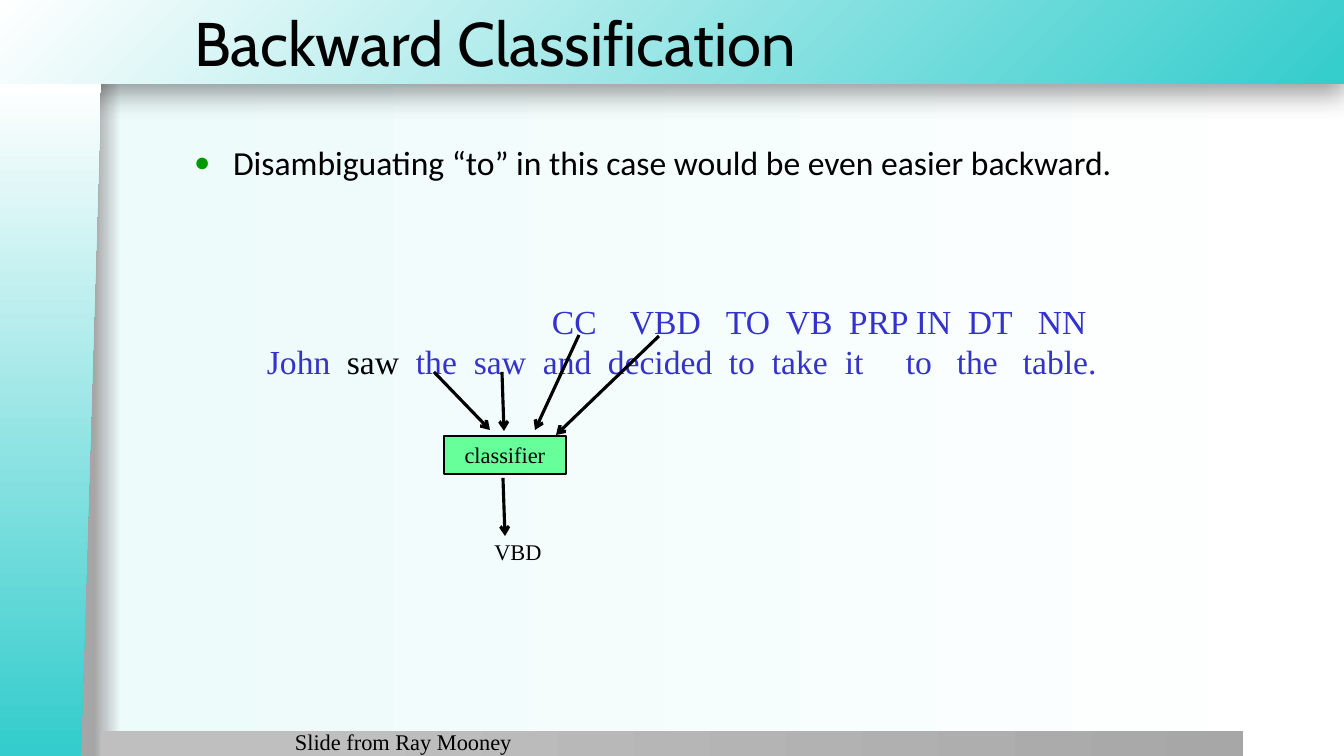
from dataclasses import dataclass
from typing import Any, NamedTuple, Optional

from lxml.etree import SubElement
from pptx import Presentation
from pptx.dml.color import RGBColor
from pptx.enum.shapes import MSO_CONNECTOR, MSO_SHAPE
from pptx.enum.text import MSO_ANCHOR, MSO_AUTO_SIZE, PP_ALIGN
from pptx.oxml.ns import qn
from pptx.util import Emu, Pt

EMU_PER_PX = 914400 / 100.8


def px(n: int) -> Emu:
    return Emu(round(n * EMU_PER_PX))


@dataclass(frozen=True)
class Theme:
    black: str = "000000"
    blue: str = "3333CC"
    green: str = "009900"
    mint: str = "66FF99"
    teal: str = "34CCCC"
    white: str = "FFFFFF"
    ice: str = "EDFBFB"
    grey: str = "A6A6A6"
    grey_light: str = "BFBFBF"
    grey_dark: str = "A7A7A7"
    heading: str = "Cabin"
    body: str = "Calibri"
    serif: str = "Times New Roman"
    title_size: int = 44
    text_size: int = 24
    label_size: int = 16
    arrow_width: float = 2.25


T = Theme()


class Box(NamedTuple):
    left: int
    top: int
    width: int
    height: int


class Gradient(NamedTuple):
    stops: tuple[tuple[int, str], ...]
    radial: bool = False


class Band(NamedTuple):
    kind: MSO_SHAPE
    box: Box
    gradient: Gradient
    rotation: int = 0
    flip: bool = False
    shadow: bool = False


class Label(NamedTuple):
    text: str
    box: Box
    align: PP_ALIGN
    fill: Optional[str] = None


class Arrow(NamedTuple):
    x1: int
    y1: int
    x2: int
    y2: int


class Word(NamedTuple):
    text: str
    left: int
    color: str = T.blue


BACKGROUND = Gradient(((7, T.grey), (9, T.ice), (100, T.white)))
BANDS = (
    Band(MSO_SHAPE.RECTANGLE, Box(-1, 0, 1345, 84),
         Gradient(((0, T.teal), (100, T.white)), radial=True), shadow=True),
    Band(MSO_SHAPE.RECTANGLE, Box(101, 731, 1142, 26),
         Gradient(((20, T.grey_light), (100, T.grey_dark)))),
    Band(MSO_SHAPE.FLOWCHART_MANUAL_INPUT, Box(-286, 370, 673, 101),
         Gradient(((1, T.teal), (100, T.white))), rotation=270, flip=True),
)
TITLE_BOX = Box(184, 0, 1160, 84)
BODY_BOX = Box(184, 137, 1058, 584)
BULLET_INDENT = 39
SENTENCE_BOX = Box(257, 296, 858, 92)
SENTENCE_LEFT = 267
TAGS = (Word("CC", 552), Word("VBD", 630), Word("TO", 726), Word("VB", 786),
        Word("PRP", 849), Word("IN", 916), Word("DT", 968), Word("NN", 1038))
WORDS = (Word("John", 267), Word("saw", 347, T.black), Word("the", 416),
         Word("saw", 474), Word("and", 543), Word("decided", 608),
         Word("to", 729), Word("take", 772), Word("it", 845),
         Word("to", 906), Word("the", 957), Word("table.", 1023))
LABELS = (
    Label("classifier", Box(444, 436, 122, 38), PP_ALIGN.CENTER, T.mint),
    Label("VBD", Box(465, 533, 106, 37), PP_ALIGN.CENTER),
    Label("Slide from Ray Mooney", Box(285, 723, 345, 25), PP_ALIGN.LEFT),
)
ARROWS = (Arrow(434, 372, 490, 430), Arrow(502, 372, 504, 431),
          Arrow(579, 335, 535, 430), Arrow(659, 336, 556, 435),
          Arrow(503, 478, 505, 536))


def apply(target: Any, formats: dict[str, Any]) -> None:
    for name, value in formats.items():
        setattr(target, name, value)


def add(parent: Any, tag: str, **attrs: Any) -> Any:
    return SubElement(parent, qn(tag), {k: str(v) for k, v in attrs.items()})


def place(sp: Any, box: Box) -> None:
    apply(sp, {name: px(n) for name, n in box._asdict().items()})


def write(p: Any, text: str, font: str, size: int, color: str = T.black) -> None:
    r = p.add_run()
    r.text = text
    apply(r.font, {"name": font, "size": Pt(size), "bold": False})
    r.font.color.rgb = RGBColor.from_string(color)


def paint(fill: Any, owner: Any, gradient: Gradient) -> None:
    fill.gradient()
    grad = next(owner.iter(qn("a:gradFill")))
    for child in list(grad):
        grad.remove(child)
    stops = add(grad, "a:gsLst")
    for pos, color in gradient.stops:
        add(add(stops, "a:gs", pos=pos * 1000), "a:srgbClr", val=color)
    if gradient.radial:
        path = add(grad, "a:path", path="circle")
        add(path, "a:fillToRect", l=100000, t=100000)
    else:
        add(grad, "a:lin", ang=0, scaled=0)


def draw_band(s: Any, band: Band) -> None:
    sp = s.shapes.add_shape(band.kind, *map(px, band.box))
    apply(sp, {"rotation": band.rotation})
    sp.shadow.inherit = False
    sp.line.fill.background()
    props = sp.element.spPr
    paint(sp.fill, props, band.gradient)
    if band.flip:
        props.find(qn("a:xfrm")).set("flipV", "1")
    if band.shadow:
        shadow = add(props.find(qn("a:effectLst")), "a:outerShdw", blurRad=Pt(20),
                     dist=Pt(6), dir=5400000, algn="t", rotWithShape=0)
        add(add(shadow, "a:srgbClr", val=T.black), "a:alpha", val=40000)


def draw_title(s: Any, text: str) -> None:
    sp = s.shapes.title
    s.shapes.element.append(sp.element)
    place(sp, TITLE_BOX)
    apply(sp.text_frame, {"vertical_anchor": MSO_ANCHOR.MIDDLE,
                          "auto_size": MSO_AUTO_SIZE.NONE})
    p = sp.text_frame.paragraphs[0]
    p.alignment = PP_ALIGN.LEFT
    write(p, text, T.heading, T.title_size)


def draw_body(s: Any, text: str) -> None:
    sp = s.placeholders[1]
    s.shapes.element.append(sp.element)
    place(sp, BODY_BOX)
    sp.text_frame.auto_size = MSO_AUTO_SIZE.NONE
    p = sp.text_frame.paragraphs[0]
    write(p, text, T.body, T.text_size)
    props = p._p.get_or_add_pPr()
    props.set("marL", str(px(BULLET_INDENT)))
    props.set("indent", str(-px(BULLET_INDENT)))
    add(add(props, "a:spcBef"), "a:spcPct", val=20000)
    add(add(props, "a:buClr"), "a:srgbClr", val=T.green)
    add(props, "a:buSzPct", val=80000)
    add(props, "a:buChar", char="●")


def draw_sentence(s: Any) -> None:
    tf = s.shapes.add_textbox(*map(px, SENTENCE_BOX)).text_frame
    tf.word_wrap = True
    for p, row in zip((tf.paragraphs[0], tf.add_paragraph()), (TAGS, WORDS)):
        tabs = add(p._p.get_or_add_pPr(), "a:tabLst")
        for word in row:
            indented = word.left > SENTENCE_LEFT
            if indented:
                add(tabs, "a:tab", pos=px(word.left - SENTENCE_LEFT), algn="l")
            write(p, "\t" * indented + word.text, T.serif, T.text_size, word.color)


def draw_label(s: Any, label: Label) -> None:
    if label.fill:
        sp = s.shapes.add_shape(MSO_SHAPE.RECTANGLE, *map(px, label.box))
        sp.shadow.inherit = False
        sp.fill.solid()
        sp.fill.fore_color.rgb = RGBColor.from_string(label.fill)
        sp.line.color.rgb = RGBColor.from_string(T.black)
        sp.line.width = Pt(1)
    else:
        sp = s.shapes.add_textbox(*map(px, label.box))
    sp.text_frame.word_wrap = True
    p = sp.text_frame.paragraphs[0]
    p.alignment = label.align
    write(p, label.text, T.serif, T.label_size)


def draw_arrow(s: Any, arrow: Arrow) -> None:
    line = s.shapes.add_connector(MSO_CONNECTOR.STRAIGHT, *map(px, arrow))
    line.line.color.rgb = RGBColor.from_string(T.black)
    line.line.width = Pt(T.arrow_width)
    props = line._element.spPr
    add(props.find(qn("a:ln")), "a:tailEnd", type="arrow")
    add(props, "a:effectLst")


def main() -> None:
    prs = Presentation()
    apply(prs, {"slide_width": px(1344), "slide_height": px(756)})
    s = prs.slides.add_slide(prs.slide_layouts[1])
    paint(s.background.fill, s.element, BACKGROUND)
    for band in BANDS:
        draw_band(s, band)
    draw_title(s, "Backward Classification")
    draw_body(s, "Disambiguating “to” in this case would be even easier backward.")
    draw_sentence(s)
    for label in LABELS:
        draw_label(s, label)
    for arrow in ARROWS:
        draw_arrow(s, arrow)
    prs.save("out.pptx")


if __name__ == "__main__":
    main()
